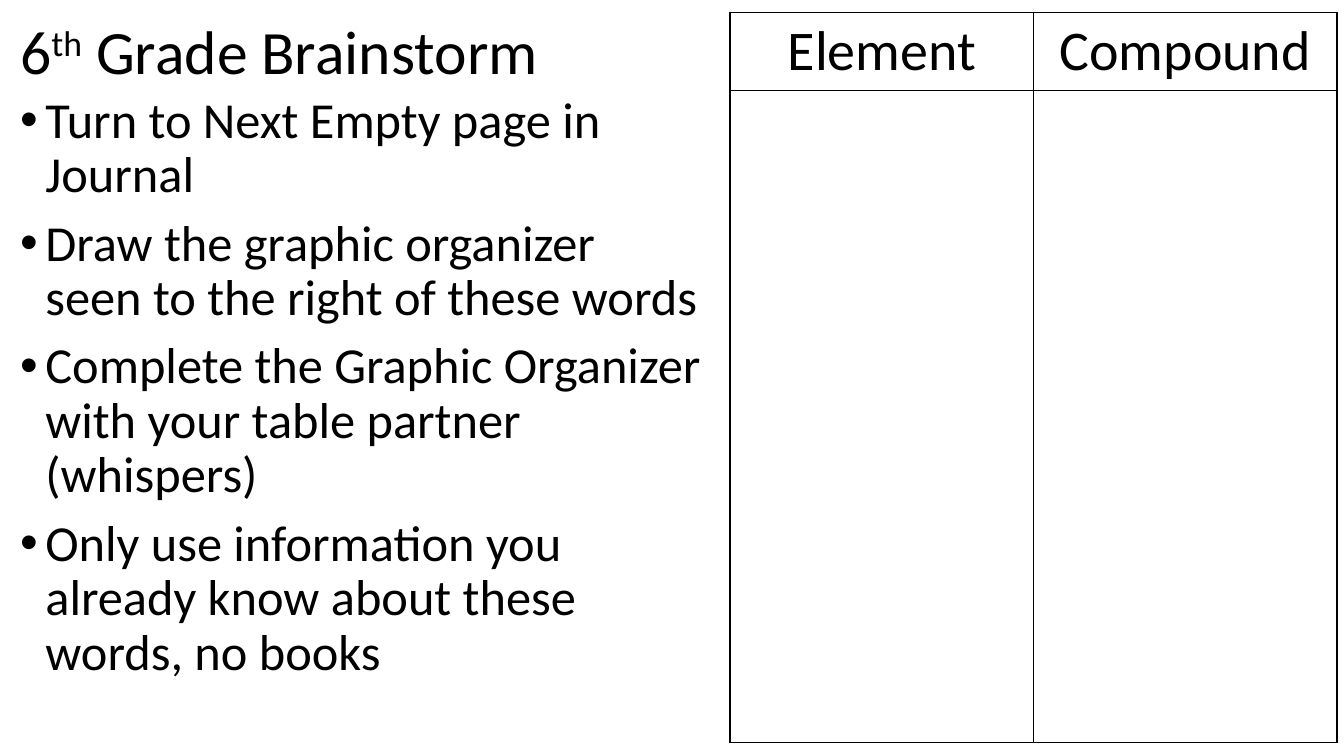
"""Build the Grade 6 brainstorm slide with its two-column organizer."""
from lxml.etree import SubElement as Sub
from pptx import Presentation
from pptx.dml.color import RGBColor
from pptx.enum.text import MSO_ANCHOR as Anchor, MSO_AUTO_SIZE as Fit, PP_ALIGN as Align
from pptx.oxml.ns import qn
from pptx.util import Pt

INK = "000000"
FACE = "Calibri"
TITLE = [("6", 0), ("th", 30000), (" Grade Brainstorm", 0)]
STEPS = [
    "Turn to Next Empty page in Journal",
    "Draw the graphic organizer seen to the right of these words",
    "Complete the Graphic Organizer with your table partner (whispers)",
    "Only use information you already know about these words, no books",
]
HEADS = ["Element", "Compound"]
ROWS = [55.5, 465.75]
COL = 216.75


def paint(font, color):
    font.color.rgb = RGBColor.from_string(color)


def style(para, size, align=Align.LEFT):
    para.alignment = align
    para.font.size = Pt(size)
    para.font.name = FACE
    paint(para.font, INK)


def place(shape, left, top, width, height, anchor):
    shape.left, shape.top = Pt(left), Pt(top)
    shape.width, shape.height = Pt(width), Pt(height)
    frame = shape.text_frame
    frame.word_wrap = True
    frame.auto_size = Fit.NONE
    frame.vertical_anchor = anchor
    return frame


def bullet(para):
    props = para._p.get_or_add_pPr()
    props.set("marL", str(Pt(18)))
    props.set("indent", str(Pt(-18)))
    mark = Sub(props, qn("a:buChar"), char="•")
    fonts = props.find(qn("a:defRPr"))
    if fonts is not None:
        fonts.addprevious(mark)


def border(cell, color, width):
    props = cell._tc.get_or_add_tcPr()
    for side in ("lnL", "lnR", "lnT", "lnB"):
        line = Sub(props, qn("a:" + side), w=str(Pt(width)))
        fill = Sub(line, qn("a:solidFill"))
        Sub(fill, qn("a:srgbClr"), val=color)


def main():
    deck = Presentation()
    deck.slide_width, deck.slide_height = Pt(960), Pt(540)
    slide = deck.slides.add_slide(deck.slide_layouts[1])
    title, body = slide.placeholders

    frame = place(title, 7.2, -13, 828, 104.4, Anchor.MIDDLE)
    para = frame.paragraphs[0]
    style(para, 44)
    para.line_spacing = 0.9
    for text, base in TITLE:
        run = para.add_run()
        run.text = text
        if base:
            run._r.get_or_add_rPr().set("baseline", str(base))

    frame = place(body, 7.2, 64, 501, 463.7, Anchor.TOP)
    frame.text = "\n".join(STEPS)
    for para in frame.paragraphs:
        style(para, 36)
        para.line_spacing = 0.9
        para.space_before = Pt(10)
        bullet(para)

    grid = slide.shapes.add_table(
        len(ROWS), len(HEADS), Pt(521.5), Pt(8.75),
        Pt(COL * len(HEADS)), Pt(sum(ROWS))).table
    grid.first_row = grid.horz_banding = False
    for col in grid.columns:
        col.width = Pt(COL)
    for row, height in zip(grid.rows, ROWS):
        row.height = Pt(height)
    for cell in grid.iter_cells():
        border(cell, INK, 1)
        cell.fill.background()
    for cell, head in zip(grid.rows[0].cells, HEADS):
        cell.text = head
        style(cell.text_frame.paragraphs[0], 40, Align.CENTER)

    deck.save("out.pptx")


if __name__ == "__main__":
    main()
